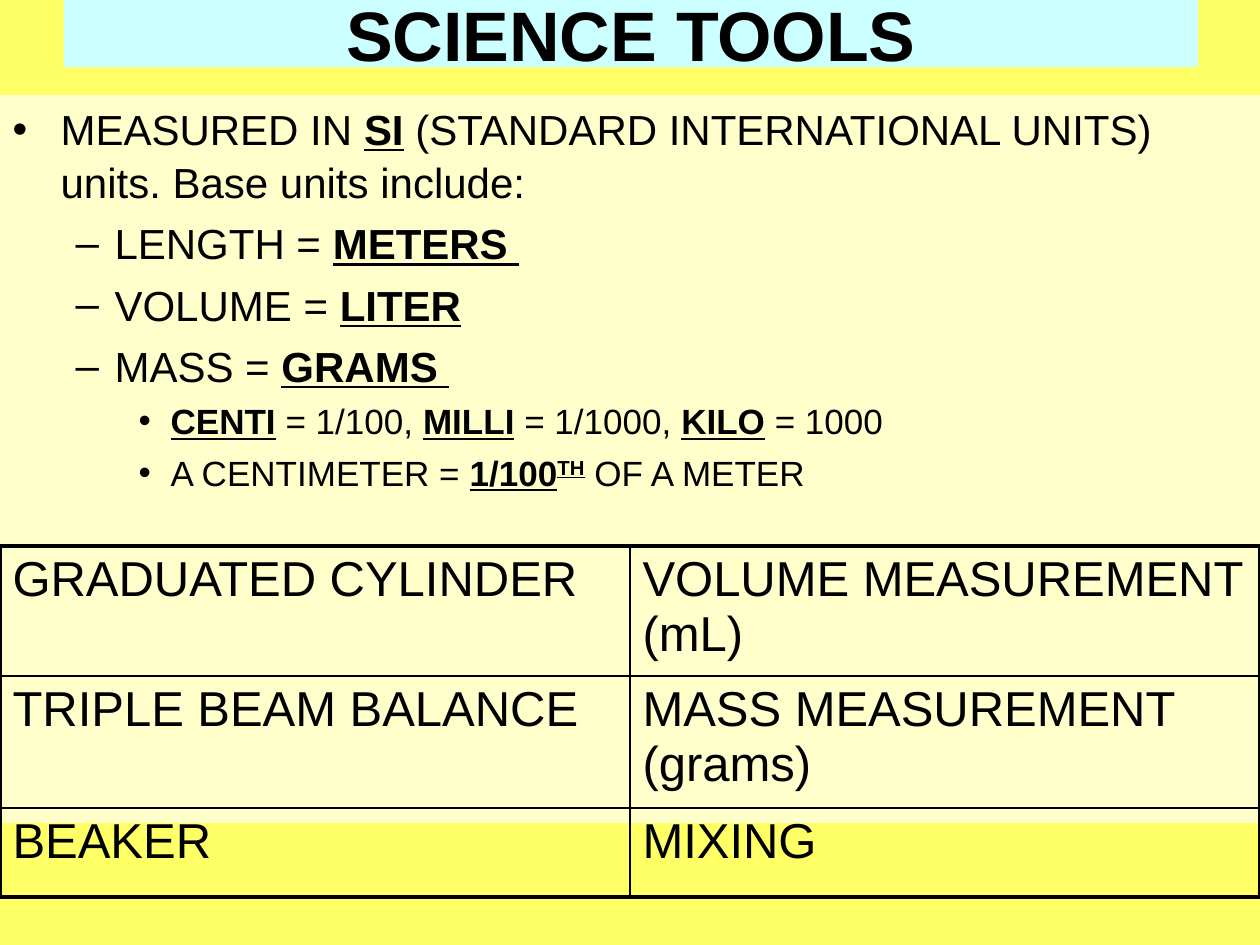
from pptx import Presentation
from pptx.dml.color import RGBColor
from pptx.enum.text import MSO_ANCHOR, MSO_AUTO_SIZE, PP_ALIGN
from pptx.oxml import parse_xml
from pptx.oxml.ns import nsdecls
from pptx.util import Pt

PX = 914400 / 126  # EMU per px
COLORS = {"background": "FFFF66", "title": "CCFFFF", "body": "FFFFCC", "ink": "000000"}


def px(*lengths):
    return [round(length * PX) for length in lengths]


def style_font(font, size, bold=None):
    font.name = "Arial"
    font.size = Pt(size)
    font.bold = bold
    font.color.rgb = RGBColor.from_string(COLORS["ink"])


presentation = Presentation()
presentation.slide_width, presentation.slide_height = px(1260, 945)
slide = presentation.slides.add_slide(presentation.slide_layouts[1])
slide.background.fill.solid()
slide.background.fill.fore_color.rgb = RGBColor.from_string(COLORS["background"])

# Title and body panels
title, body = slide.shapes.title, slide.placeholders[1]
for shape, color, box in ((title, "title", (64, 0, 1134, 67)),
                          (body, "body", (0, 95, 1260, 728))):
    shape.left, shape.top, shape.width, shape.height = px(*box)
    shape.fill.solid()
    shape.fill.fore_color.rgb = RGBColor.from_string(COLORS[color])
    shape.text_frame.word_wrap = True
    shape.text_frame.auto_size = MSO_AUTO_SIZE.NONE

title.text_frame.text = "SCIENCE TOOLS"
title.text_frame.vertical_anchor = MSO_ANCHOR.MIDDLE
heading = title.text_frame.paragraphs[0]
heading.alignment = PP_ALIGN.CENTER
style_font(heading.font, 40, True)

# Bullet list: plain and key (bold, underlined) pieces alternate
bullets = [
    (0, ["MEASURED IN ", "SI", " (STANDARD INTERNATIONAL UNITS) units. Base units include:"]),
    (1, ["LENGTH = ", "METERS "]),
    (1, ["VOLUME = ", "LITER"]),
    (1, ["MASS = ", "GRAMS "]),
    (2, ["", "CENTI", " = 1/100, ", "MILLI", " = 1/1000, ", "KILO", " = 1000"]),
    (2, ["A CENTIMETER = ", "1/100^TH", " OF A METER"]),
]
# Per level: font size, left margin and hanging indent in px
LEVELS = [(24, 48, 48), (24, 102, 39), (20, 158, 32)]

for index, (level, pieces) in enumerate(bullets):
    frame = body.text_frame
    paragraph = frame.add_paragraph() if index else frame.paragraphs[0]
    size, margin, hanging = LEVELS[level]
    paragraph.level = level
    paragraph.space_before = Pt(size * 0.2)
    paragraph.line_spacing = 1.05
    style_font(paragraph.font, size)
    properties = paragraph._p.get_or_add_pPr()
    properties.set("marL", str(px(margin)[0]))
    properties.set("indent", str(px(-hanging)[0]))
    for position, piece in enumerate(pieces):
        for raised, text in enumerate(piece.split("^")):
            if not text:
                continue
            run = paragraph.add_run()
            run.text = text
            if position % 2:
                run.font.bold = run.font.underline = True
            if raised:
                run.font._element.set("baseline", "30000")

# Table of tools
tools = [("GRADUATED CYLINDER", "VOLUME MEASUREMENT (mL)"),
         ("TRIPLE BEAM BALANCE", "MASS MEASUREMENT (grams)"),
         ("BEAKER", "MIXING")]
row_heights = [130, 132, 89]
table = slide.shapes.add_table(3, 2, *px(0, 546, 1260, sum(row_heights))).table
table.first_row = table.horz_banding = False
for row, height in zip(table.rows, row_heights):
    row.height = px(height)[0]

for row_index, texts in enumerate(tools):
    for column_index, text in enumerate(texts):
        cell = table.cell(row_index, column_index)
        cell.text = text
        style_font(cell.text_frame.paragraphs[0].font, 28)
        # Thick outer edges, thin inner ones
        outer = {"L": column_index == 0, "R": column_index == 1,
                 "T": row_index == 0, "B": row_index == 2}
        for side, is_outer in outer.items():
            cell._tc.get_or_add_tcPr().append(parse_xml(
                f'<a:ln{side} {nsdecls("a")} w="{Pt(2.25 if is_outer else 1)}"><a:solidFill>'
                f'<a:srgbClr val="{COLORS["ink"]}"/></a:solidFill></a:ln{side}>'))
        cell.fill.background()

presentation.save("out.pptx")
